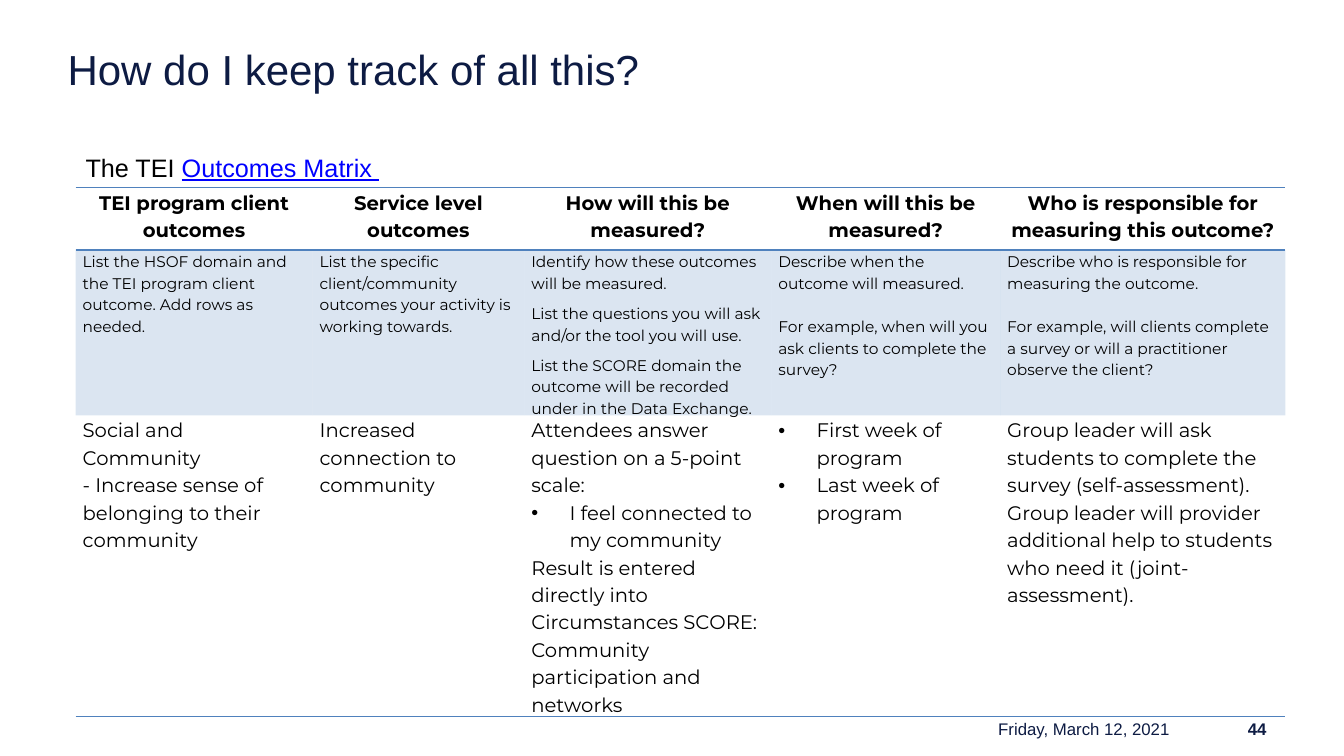
from lxml import etree
from pptx import Presentation
from pptx.dml.color import RGBColor
from pptx.enum.text import MSO_ANCHOR as Anchor, PP_ALIGN as Align
from pptx.oxml.ns import qn
from pptx.util import Inches, Pt

NAVY = RGBColor(0x0D, 0x1B, 0x43)
BLACK = RGBColor(0, 0, 0)
LINK_BLUE = RGBColor(0, 0, 0xFF)
RULE_BLUE = RGBColor(0x4F, 0x81, 0xBD)
PLAIN_STYLE = "{2D5ABB26-0587-4C30-8999-92F81FD0307C}"

COLUMN_WIDTHS = [2.35, 2.1, 2.45, 2.27, 2.83]
ROW_HEIGHTS = [0.62, 1.6, 2.99]
BULLET = "• "

# Each cell is a list of paragraphs; a leading bullet marks a list item
HEADINGS = [
    ["TEI program client outcomes"],
    ["Service level outcomes"],
    ["How will this be measured?"],
    ["When will this be measured?"],
    ["Who is responsible for measuring this outcome?"],
]
GUIDANCE = [
    ["List the HSOF domain and the TEI program client outcome. Add rows as needed."],
    ["List the specific client/community outcomes your activity is working towards."],
    ["Identify how these outcomes will be measured.",
     "List the questions you will ask and/or the tool you will use.",
     "List the SCORE domain the outcome will be recorded under in the Data Exchange."],
    ["Describe when the outcome will measured.",
     "For example, when will you ask clients to complete the survey?"],
    ["Describe who is responsible for measuring the outcome.",
     "For example, will clients complete a survey or will a practitioner "
     "observe the client?"],
]
EXAMPLE = [
    ["Social and Community", "- Increase sense of belonging to their community"],
    ["Increased connection to community"],
    ["Attendees answer question on a 5-point scale:",
     BULLET + "I feel connected to my community",
     "Result is entered directly into Circumstances SCORE: Community "
     "participation and networks"],
    [BULLET + "First week of program", BULLET + "Last week of program"],
    ["Group leader will ask students to complete the survey (self-assessment). "
     "Group leader will provider additional help to students who need it "
     "(joint-assessment)."],
]
GUIDANCE_GAPS = [0, 0, 6, 15.5, 15.5]  # points between paragraphs, by column
NO_GAPS = [0] * 5


def add_run(p, text, size, color, font="Arial", bold=False, underline=False):
    r = p.add_run()
    r.text = text
    r.font.name = font
    r.font.size = Pt(size)
    r.font.color.rgb = color
    r.font.bold = bold
    r.font.underline = underline


def add_title(s, text):
    sp = s.shapes.title
    sp.left, sp.top = Inches(0.67), Inches(0.4)
    sp.width, sp.height = Inches(12), Inches(0.66)
    tf = sp.text_frame
    tf.margin_left = tf.margin_right = tf.margin_bottom = 0
    tf.margin_top = Inches(0.03)
    tf.vertical_anchor = Anchor.TOP
    p = tf.paragraphs[0]
    p.alignment = Align.LEFT
    add_run(p, text, 30, NAVY)


def add_text_box(s, left, top, width, height, align, anchor=Anchor.TOP):
    sp = s.shapes.add_textbox(Inches(left), Inches(top),
                              Inches(width), Inches(height))
    tf = sp.text_frame
    tf.word_wrap = True
    tf.vertical_anchor = anchor
    p = tf.paragraphs[0]
    p.alignment = align
    return p


def add_bullet(p):
    pPr = p._p.get_or_add_pPr()
    pPr.set("marL", str(Inches(0.38)))
    pPr.set("indent", str(-Inches(0.38)))
    etree.SubElement(pPr, qn("a:buFont"), typeface="Arial")
    etree.SubElement(pPr, qn("a:buChar"), char=BULLET.strip())


def add_borders(cell, sides):
    tcPr = cell._tc.get_or_add_tcPr()
    for i, side in enumerate(sides):
        ln = etree.Element(qn("a:ln" + side), w=str(Pt(1)))
        fill = etree.SubElement(ln, qn("a:solidFill"))
        etree.SubElement(fill, qn("a:srgbClr"), val=str(RULE_BLUE))
        tcPr.insert(i, ln)


def tint(cell, percent):
    cell.fill.solid()
    cell.fill.fore_color.rgb = RULE_BLUE
    color = cell._tc.tcPr.find(".//" + qn("a:srgbClr"))
    etree.SubElement(color, qn("a:alpha"), val=str(percent * 1000))


def fill_cell(cell, paragraphs, size, gap, heading):
    cell.margin_left = cell.margin_right = Inches(0.07)
    cell.margin_top = cell.margin_bottom = 0
    tf = cell.text_frame
    for i, text in enumerate(paragraphs):
        p = tf.add_paragraph() if i else tf.paragraphs[0]
        p.alignment = Align.CENTER if heading else Align.LEFT
        p.line_spacing = 1.15
        if i and gap:
            p.space_before = Pt(gap)
        if text.startswith(BULLET):
            add_bullet(p)
        add_run(p, text.removeprefix(BULLET), size, BLACK, "Montserrat", heading)


def add_matrix(s):
    frame = s.shapes.add_table(
        len(ROW_HEIGHTS), len(COLUMN_WIDTHS), Inches(0.75), Inches(1.86),
        Inches(sum(COLUMN_WIDTHS)), Inches(sum(ROW_HEIGHTS)))
    table = frame.table
    table.horz_banding = False
    table._tbl.tblPr.find(qn("a:tableStyleId")).text = PLAIN_STYLE
    for column, width in zip(table.columns, COLUMN_WIDTHS):
        column.width = Inches(width)
    for row, height in zip(table.rows, ROW_HEIGHTS):
        row.height = Inches(height)

    # Text, size, paragraph gaps and ruled sides of each row
    rows = [(HEADINGS, 14, NO_GAPS, "TB"),
            (GUIDANCE, 11, GUIDANCE_GAPS, ""),
            (EXAMPLE, 14, NO_GAPS, "B")]
    for r, (texts, size, gaps, sides) in enumerate(rows):
        for c, (paragraphs, gap) in enumerate(zip(texts, gaps)):
            cell = table.cell(r, c)
            fill_cell(cell, paragraphs, size, gap, heading=r == 0)
            if texts is GUIDANCE:
                tint(cell, 20)
            else:
                cell.fill.background()
            add_borders(cell, sides)


def main():
    prs = Presentation()
    prs.slide_width, prs.slide_height = Inches(13.33), Inches(7.5)
    s = prs.slides.add_slide(prs.slide_layouts[5])

    add_title(s, "How do I keep track of all this?")

    # Footer
    p = add_text_box(s, 11.57, 7.12, 1.09, 0.23, Align.RIGHT, Anchor.MIDDLE)
    add_run(p, "44", 12, NAVY, bold=True)
    p = add_text_box(s, 8.59, 7.12, 3.11, 0.23, Align.RIGHT, Anchor.MIDDLE)
    add_run(p, "Friday, March 12, 2021", 12, NAVY)

    # Outcomes matrix and its caption
    add_matrix(s)
    p = add_text_box(s, 0.75, 1.46, 5.75, 0.4, Align.LEFT)
    add_run(p, "The TEI ", 18, BLACK)
    add_run(p, "Outcomes Matrix ", 18, LINK_BLUE, underline=True)

    prs.save("out.pptx")


if __name__ == "__main__":
    main()
